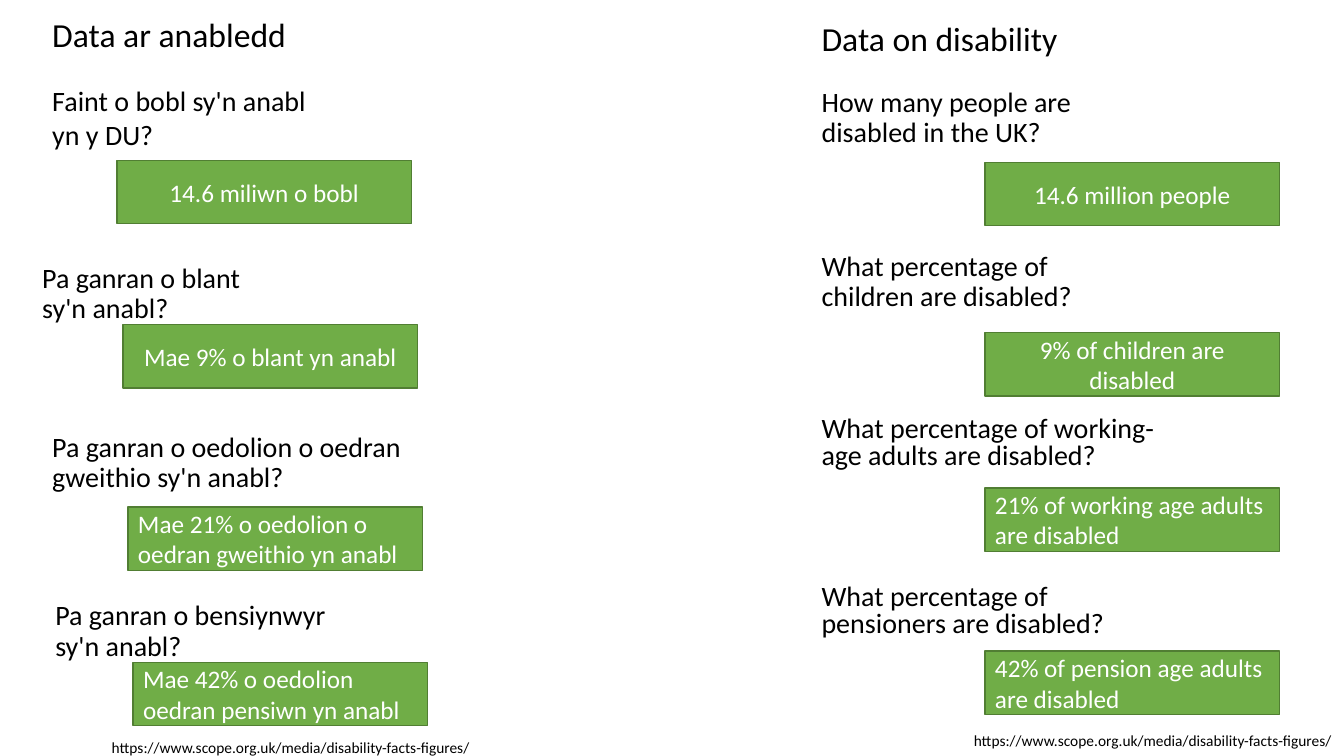
import pptx
import pptx.dml.color
import pptx.enum.shapes
import pptx.enum.text
import pptx.util

Inches = pptx.util.Inches
Pt = pptx.util.Pt
ALIGN = pptx.enum.text.PP_ALIGN
ANCHOR = pptx.enum.text.MSO_ANCHOR


def rgb(value):
    return pptx.dml.color.RGBColor.from_string(value)


class Deck:
    font = "Calibri"
    black, white = "000000", "FFFFFF"
    green, dark_green = "70AD47", "517E33"

    def __init__(self, width, height):
        self.prs = pptx.Presentation()
        self.prs.slide_width = Inches(width)
        self.prs.slide_height = Inches(height)
        self.slide = self.prs.slides.add_slide(self.prs.slide_layouts[6])

    def set_text(self, sp, text, size, color, anchor, align=ALIGN.LEFT, spacing=1.0):
        tf = sp.text_frame
        tf.word_wrap = True
        tf.vertical_anchor = anchor
        p = tf.paragraphs[0]
        p.text = text
        p.alignment = align
        p.line_spacing = spacing
        p.font.name = self.font
        p.font.size = Pt(size)
        p.font.color.rgb = rgb(color)

    def label(self, text, x, y, w, h, size, anchor=ANCHOR.TOP, spacing=1.0):
        sp = self.slide.shapes.add_textbox(Inches(x), Inches(y), Inches(w), Inches(h))
        self.set_text(sp, text, size, self.black, anchor, spacing=spacing)

    def answer(self, text, x, y, align):
        sp = self.slide.shapes.add_shape(
            pptx.enum.shapes.MSO_SHAPE.RECTANGLE,
            Inches(x), Inches(y), Inches(2.92), Inches(0.63))
        sp.shadow.inherit = False
        sp.fill.solid()
        sp.fill.fore_color.rgb = rgb(self.green)
        sp.line.color.rgb = rgb(self.dark_green)
        sp.line.width = Pt(1)
        self.set_text(sp, text, 18, self.white, ANCHOR.MIDDLE, align)


SOURCE = "https://www.scope.org.uk/media/disability-facts-figures/"

# Questions: text, left, top, width, height, line spacing
WELSH_QUESTIONS = [
    ("Faint o bobl sy'n anabl yn y DU?", 0.42, 0.78, 2.96, 0.77, 1.0),
    ("Pa ganran o blant sy'n anabl?", 0.32, 2.57, 2.3, 0.71, 0.9),
    ("Pa ganran o oedolion o oedran gweithio sy'n anabl?", 0.42, 4.25, 3.73, 0.71, 0.9),
    ("Pa ganran o bensiynwyr sy'n anabl?", 0.45, 5.92, 3.3, 0.71, 0.9),
]
ENGLISH_QUESTIONS = [
    ("How many people are disabled in the UK?", 8.05, 0.8, 3.18, 0.75, 0.9),
    ("What percentage of children are disabled?", 8.05, 2.38, 2.79, 0.84, 0.9),
    ("What percentage of working-age adults are disabled?", 8.05, 4.06, 3.57, 0.68, 0.8),
    ("What percentage of pensioners are disabled?", 8.05, 5.73, 3.57, 0.68, 0.8),
]

# Answers: text, left, top, alignment
WELSH_ANSWERS = [
    ("14.6 miliwn o bobl", 1.16, 1.59, ALIGN.CENTER),
    ("Mae 9% o blant yn anabl", 1.22, 3.22, ALIGN.CENTER),
    ("Mae 21% o oedolion o oedran gweithio yn anabl", 1.27, 5.03, ALIGN.LEFT),
    ("Mae 42% o oedolion oedran pensiwn yn anabl", 1.32, 6.57, ALIGN.LEFT),
]
ENGLISH_ANSWERS = [
    ("14.6 million people", 9.77, 1.61, ALIGN.CENTER),
    ("9% of children are disabled", 9.77, 3.3, ALIGN.CENTER),
    ("21% of working age adults are disabled", 9.77, 4.84, ALIGN.LEFT),
    ("42% of pension age adults are disabled", 9.77, 6.46, ALIGN.LEFT),
]


def main():
    deck = Deck(13.33, 7.5)

    # Headings
    deck.label("Data ar anabledd", 0.42, 0.09, 3.73, 0.5, 24)
    deck.label("Data on disability", 8.05, 0.13, 3.72, 0.5, 24)

    # Questions in both languages
    for questions, anchor in ((WELSH_QUESTIONS, ANCHOR.TOP),
                              (ENGLISH_QUESTIONS, ANCHOR.MIDDLE)):
        for text, x, y, w, h, spacing in questions:
            deck.label(text, x, y, w, h, 20, anchor, spacing)

    # Answer boxes
    for text, x, y, align in WELSH_ANSWERS + ENGLISH_ANSWERS:
        deck.answer(text, x, y, align)

    # Sources
    for x, y in ((1.01, 7.27), (9.56, 7.2)):
        deck.label(SOURCE, x, y, 4.43, 0.29, 11)

    deck.prs.save("out.pptx")


if __name__ == "__main__":
    main()
